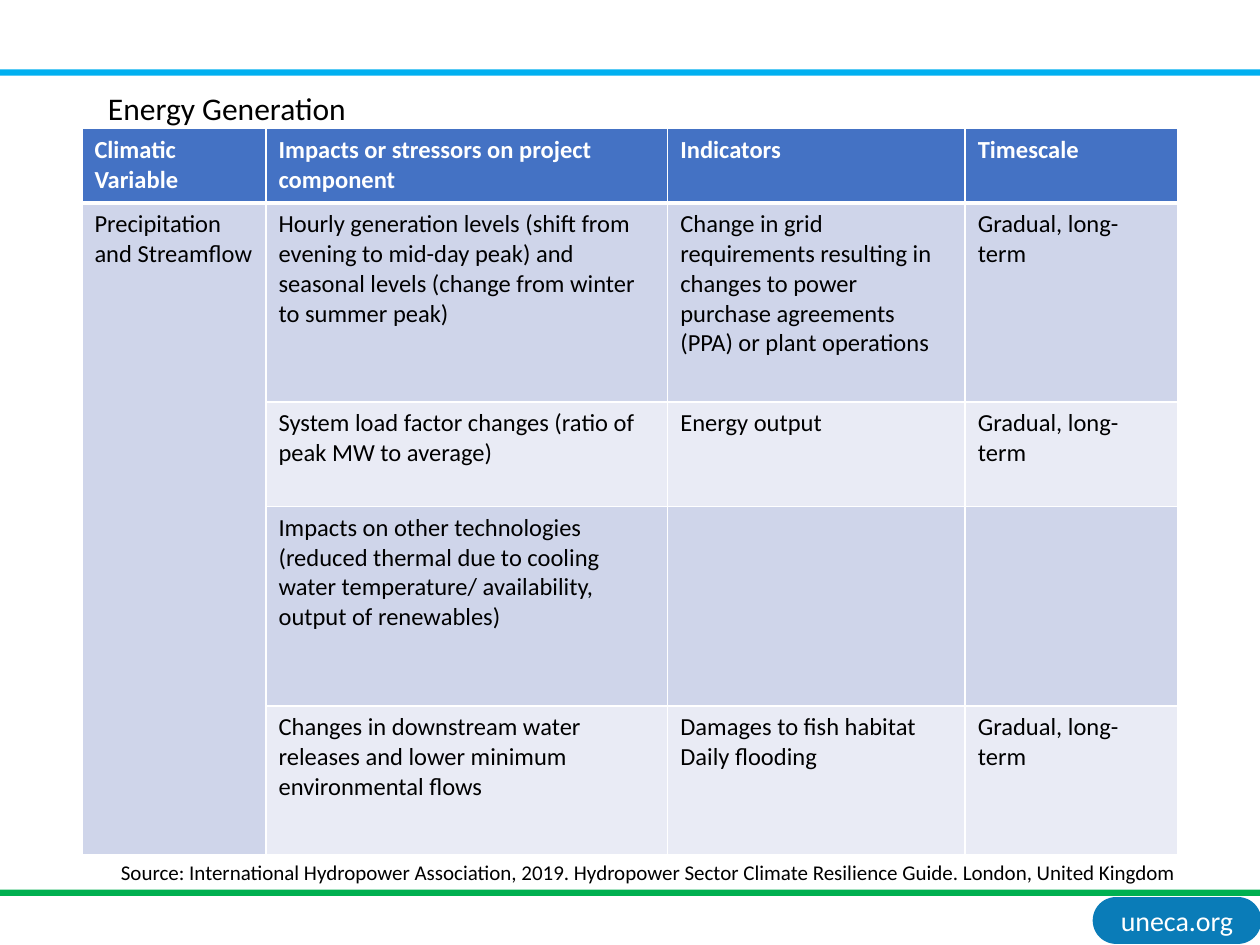
"""Build the energy generation climate impacts slide."""
import pptx
import pptx.dml.color
import pptx.enum.shapes
import pptx.enum.text
import pptx.oxml
import pptx.oxml.ns
import pptx.util

Pt = pptx.util.Pt
SHAPE = pptx.enum.shapes.MSO_SHAPE
ALIGN = pptx.enum.text.PP_ALIGN
ANCHOR = pptx.enum.text.MSO_ANCHOR

TITLE = "Energy Generation"
SOURCE = ("Source: International Hydropower Association, 2019. Hydropower Sector "
          "Climate Resilience Guide. London, United Kingdom")
SITE = "uneca.org"
BARS = [(39.6, "00B0F0"), (508.3, "00B050")]
WIDTHS = [105.2, 229.6, 170, 121.6]
HEIGHTS = [42.5, 113.8, 59.8, 113.8, 85]
ROWS = [
    ["Climatic Variable", "Impacts or stressors on project component",
     "Indicators", "Timescale"],
    ["Precipitation and Streamflow",
     "Hourly generation levels (shift from evening to mid-day peak) and "
     "seasonal levels (change from winter\nto summer peak)",
     "Change in grid requirements resulting in changes to power purchase "
     "agreements (PPA) or plant operations", "Gradual, long-term"],
    ["", "System load factor changes (ratio of peak MW to average)",
     "Energy output", "Gradual, long-term"],
    ["", "Impacts on other technologies (reduced thermal due to cooling\n"
     "water temperature/ availability, output of renewables)", "", ""],
    ["", "Changes in downstream water releases and lower minimum\n"
     "environmental flows", "Damages to fish habitat\nDaily flooding",
     "Gradual, long-term"],
]
HEADER, BANDS = "4472C4", ["CFD5EA", "E9EBF5"]


def rgb(value):
    return pptx.dml.color.RGBColor.from_string(value)


def write(tf, text, size, color="000000", bold=False, align=ALIGN.LEFT):
    tf.text = text
    for p in tf.paragraphs:
        p.alignment = align
        for r in p.runs:
            r.font.name, r.font.size, r.font.bold = "Calibri", Pt(size), bold
            r.font.color.rgb = rgb(color)


def block(s, kind, box, color):
    sp = s.shapes.add_shape(kind, *map(Pt, box))
    sp.shadow.inherit = False
    sp.fill.solid()
    sp.fill.fore_color.rgb = rgb(color)
    sp.line.fill.background()
    return sp


def border(cell, side, width):
    cell._tc.get_or_add_tcPr().append(pptx.oxml.parse_xml(
        f'<a:ln{side} {pptx.oxml.ns.nsdecls("a")} w="{Pt(width)}"><a:solidFill>'
        f'<a:srgbClr val="FFFFFF"/></a:solidFill></a:ln{side}>'))


def add_impacts(s):
    table = s.shapes.add_table(len(ROWS), len(WIDTHS), Pt(46.8), Pt(73.5),
                               Pt(sum(WIDTHS)), Pt(sum(HEIGHTS))).table
    for col, width in zip(table.columns, WIDTHS):
        col.width = Pt(width)
    for i, (row, height) in enumerate(zip(ROWS, HEIGHTS)):
        table.rows[i].height = Pt(height)
        for j, text in enumerate(row):
            cell = table.cell(i, j)
            if text:
                write(cell.text_frame, text, 14, "000000" if i else "FFFFFF", i == 0)
            for side in "LRTB":
                heavy = (i, side) in [(0, "B"), (1, "T")]
                border(cell, side, 3 if heavy else 1)
            cell.fill.solid()
            cell.fill.fore_color.rgb = rgb(BANDS[(i - 1) % 2] if i else HEADER)
    table.cell(1, 0).merge(table.cell(len(ROWS) - 1, 0))


def main():
    prs = pptx.Presentation()
    prs.slide_width, prs.slide_height = Pt(720), Pt(540)
    s = prs.slides.add_slide(prs.slide_layouts[5])

    badge = block(s, SHAPE.ROUNDED_RECTANGLE, (624.4, 512.6, 96.4, 26.8), "0A7CB8")
    badge.adjustments[0] = 0.5
    tf = badge.text_frame
    tf.margin_left = tf.margin_right = tf.margin_top = tf.margin_bottom = Pt(3.6)
    tf.vertical_anchor = ANCHOR.MIDDLE
    write(tf, SITE, 16, "FFFFFF", align=ALIGN.CENTER)
    for top, color in BARS:
        block(s, SHAPE.RECTANGLE, (0, top, 720, 3.6), color)

    add_impacts(s)

    title = s.shapes.title
    title.left, title.top, title.width, title.height = map(Pt, (54.5, 47, 152, 29))
    tf = title.text_frame
    tf.word_wrap = False
    tf.auto_size = pptx.enum.text.MSO_AUTO_SIZE.NONE
    tf.vertical_anchor = ANCHOR.TOP
    write(tf, TITLE, 18)

    note = s.shapes.add_textbox(*map(Pt, (62, 487.6, 669.6, 21.8)))
    note.text_frame.word_wrap = True
    write(note.text_frame, SOURCE, 12)
    prs.save("out.pptx")


if __name__ == "__main__":
    main()
